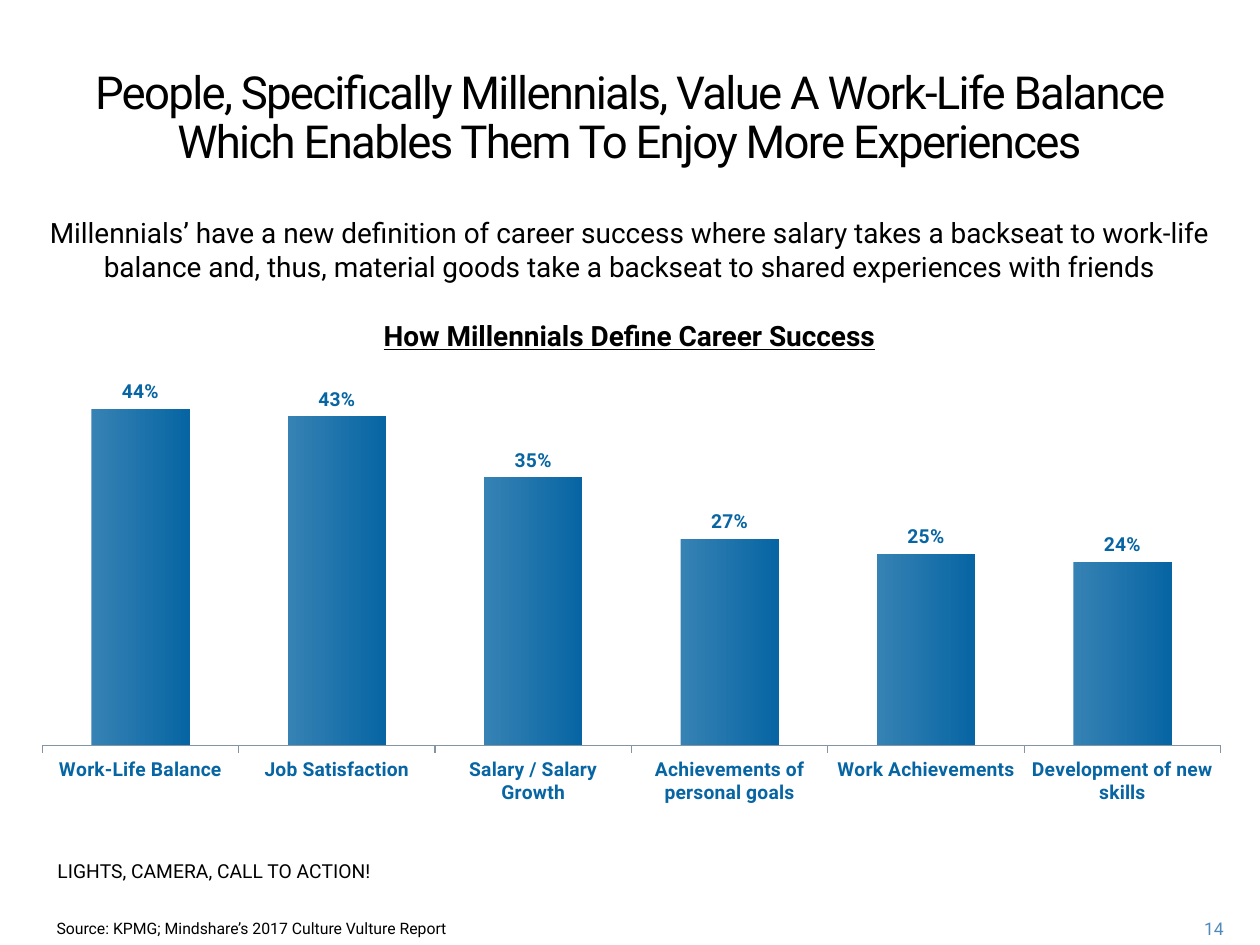
from dataclasses import dataclass

import pptx
import pptx.chart.data
import pptx.dml.color
import pptx.enum.chart
import pptx.enum.text
import pptx.oxml
import pptx.oxml.ns
import pptx.util
from pptx.util import Cm, Pt

ALIGN = pptx.enum.text.PP_ALIGN
ANCHOR = pptx.enum.text.MSO_ANCHOR
RGBColor = pptx.dml.color.RGBColor

BLACK = RGBColor(0x00, 0x00, 0x00)
BLUE = RGBColor(0x07, 0x65, 0xA3)
LIGHT_BLUE = RGBColor(0x36, 0x82, 0xB4)
PAGE_BLUE = RGBColor(0x50, 0x8A, 0xBA)
AXIS_GREY = RGBColor(0x83, 0x95, 0xA2)
FONT = "Roboto"

LEFT = 0.46
WIDTH = 24.46


@dataclass(frozen=True)
class Caption:
    """A block of text; left, top, width and height are in centimetres."""
    text: str
    left: float
    top: float
    width: float
    height: float
    size: float
    align: ALIGN = ALIGN.CENTER
    color: RGBColor = BLACK
    heading: bool = False
    line_spacing: float | None = None
    tracking: float = 0
    anchor: ANCHOR = ANCHOR.TOP


@dataclass(frozen=True)
class Success:
    definition: str
    share: float


CAPTIONS = [
    Caption("People, Specifically Millennials, Value A Work-Life Balance "
            "Which Enables Them To Enjoy More Experiences",
            LEFT, 1.27, WIDTH, 3.56, 26, line_spacing=28, tracking=-1),
    Caption("Millennials’ have a new definition of career success where salary "
            "takes a backseat to work-life balance and, thus, material goods "
            "take a backseat to shared experiences with friends",
            LEFT, 4.22, WIDTH, 1.83, 16),
    Caption("How Millennials Define Career Success",
            LEFT, 6.3, WIDTH, 1.02, 16, heading=True),
    Caption("LIGHTS, CAMERA, CALL TO ACTION!",
            0.91, 17.2, 7.82, 1.19, 11, ALIGN.LEFT),
    Caption("Source: KPMG; Mindshare’s 2017 Culture Vulture Report",
            0.89, 18.39, 15.44, 0.66, 9, ALIGN.LEFT, anchor=ANCHOR.MIDDLE),
    Caption("14", 23.37, 18.39, 1.55, 0.64, 10, ALIGN.RIGHT, PAGE_BLUE,
            anchor=ANCHOR.MIDDLE),
]

SUCCESSES = [
    Success("Work-Life Balance", 0.44),
    Success("Job Satisfaction", 0.43),
    Success("Salary / Salary Growth", 0.35),
    Success("Achievements of personal goals", 0.27),
    Success("Work Achievements", 0.25),
    Success("Development of new skills", 0.24),
]


def add_caption(slide: pptx.slide.Slide, caption: Caption) -> None:
    box = slide.shapes.add_textbox(Cm(caption.left), Cm(caption.top),
                                   Cm(caption.width), Cm(caption.height))
    frame = box.text_frame
    frame.word_wrap = True
    frame.vertical_anchor = caption.anchor
    paragraph = frame.paragraphs[0]
    run = paragraph.add_run()
    run.text = caption.text
    paragraph.alignment = caption.align
    if caption.line_spacing:
        paragraph.line_spacing = Pt(caption.line_spacing)
    font = paragraph.font
    font.name = FONT
    font.size = Pt(caption.size)
    font.color.rgb = caption.color
    if caption.heading:
        font.bold = True
        font.underline = True
    if caption.tracking:
        run.font._element.set("spc", str(round(caption.tracking * 100)))


def style_label(font: pptx.text.text.Font) -> None:
    font.name = FONT
    font.size = Pt(11)
    font.bold = True
    font.color.rgb = BLUE


def place_plot(chart: pptx.chart.chart.Chart, **bounds: float) -> None:
    """Fix the inner plot area at x, y, w, h as fractions of the chart."""
    plot_area = chart.element.chart.plotArea
    for layout in plot_area.findall(pptx.oxml.ns.qn("c:layout")):
        plot_area.remove(layout)
    sizes = "".join(f'<c:{key} val="{value}"/>' for key, value in bounds.items())
    plot_area.insert(0, pptx.oxml.parse_xml(
        f'<c:layout {pptx.oxml.ns.nsdecls("c")}><c:manualLayout>'
        '<c:layoutTarget val="inner"/><c:xMode val="edge"/><c:yMode val="edge"/>'
        f'{sizes}</c:manualLayout></c:layout>'))


def add_success_chart(slide: pptx.slide.Slide) -> None:
    data = pptx.chart.data.CategoryChartData(number_format="0%")
    data.categories = [success.definition for success in SUCCESSES]
    data.add_series("Series 1", [success.share for success in SUCCESSES])
    chart = slide.shapes.add_chart(
        pptx.enum.chart.XL_CHART_TYPE.COLUMN_CLUSTERED,
        Cm(LEFT), Cm(6.27), Cm(24.54), Cm(10.01), data).chart
    chart.has_title = False
    chart.has_legend = False
    chart.font.name = FONT
    chart.font.size = Pt(18)
    chart.font.color.rgb = BLACK
    place_plot(chart, x=0.016, y=0.104, w=0.968, h=0.771)

    definitions = chart.category_axis
    definitions.major_tick_mark = pptx.enum.chart.XL_TICK_MARK.OUTSIDE
    definitions.format.line.color.rgb = AXIS_GREY
    definitions.format.line.width = Pt(0.75)
    style_label(definitions.tick_labels.font)

    shares = chart.value_axis
    shares.minimum_scale = 0
    shares.maximum_scale = 0.5
    shares.has_major_gridlines = False
    shares.visible = False

    plot = chart.plots[0]
    plot.vary_by_categories = False
    plot.gap_width = 100
    plot.overlap = -20
    bars = plot.series[0]
    fill = bars.format.fill
    fill.gradient()
    fill.gradient_angle = 0
    for stop, color in zip(fill.gradient_stops, (LIGHT_BLUE, BLUE)):
        stop.color.rgb = color

    labels = bars.data_labels
    labels.show_value = True
    labels.number_format = "0%"
    labels.number_format_is_linked = False
    labels.position = pptx.enum.chart.XL_LABEL_POSITION.OUTSIDE_END
    style_label(labels.font)


def main() -> None:
    presentation = pptx.Presentation()
    presentation.slide_width = Cm(25.4)
    presentation.slide_height = Cm(19.05)
    slide = presentation.slides.add_slide(presentation.slide_layouts[6])
    add_success_chart(slide)
    for caption in CAPTIONS:
        add_caption(slide, caption)
    presentation.save("out.pptx")


if __name__ == "__main__":
    main()
